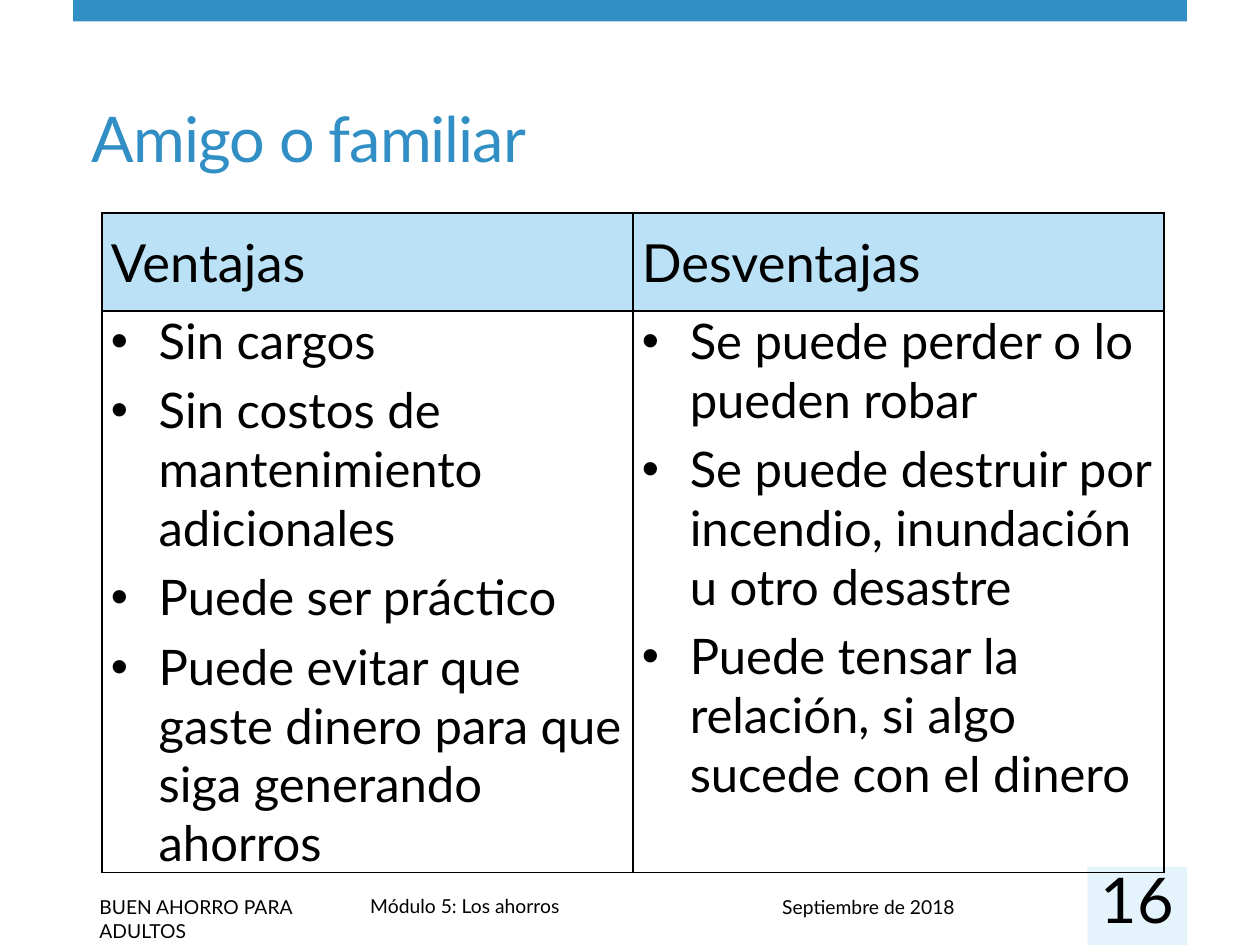
from lxml import etree
from pptx import Presentation
from pptx.dml.color import RGBColor
from pptx.enum.shapes import MSO_SHAPE
from pptx.enum.text import MSO_ANCHOR, PP_ALIGN
from pptx.oxml import parse_xml
from pptx.oxml.ns import nsdecls, qn
from pptx.util import Inches, Pt

RECT = MSO_SHAPE.RECTANGLE
TOP, MIDDLE, BOTTOM = MSO_ANCHOR.TOP, MSO_ANCHOR.MIDDLE, MSO_ANCHOR.BOTTOM
LEFT, CENTER = PP_ALIGN.LEFT, PP_ALIGN.CENTER

BLUE = RGBColor(0x31, 0x8F, 0xC5)
PALE = RGBColor(0xE4, 0xF3, 0xFC)
SKY = RGBColor(0x76, 0xC5, 0xEF)
BLACK = RGBColor(0, 0, 0)
FONT = "Lato"

COLUMNS = {
    "Ventajas": [
        "Sin cargos",
        "Sin costos de mantenimiento adicionales",
        "Puede ser práctico",
        "Puede evitar que gaste dinero para que siga generando ahorros",
    ],
    "Desventajas": [
        "Se puede perder o lo pueden robar",
        "Se puede destruir por incendio, inundación u otro desastre",
        "Puede tensar la relación, si algo sucede con el dinero",
    ],
}
FOOTERS = [
    ("BUEN AHORRO PARA ADULTOS", 0.69, 7.06, 2.09),
    ("Módulo 5: Los ahorros", 2.84, 7.05, 5.66),
    ("Septiembre de 2018", 6.11, 7.06, 2.52),
]


def write(frame, *lines, size, color=BLACK, align=LEFT, after=0,
          bullet=False, spacing=None):
    """Fill a text frame with one paragraph per line."""
    for i, line in enumerate(lines):
        para = frame.add_paragraph() if i else frame.paragraphs[0]
        if bullet:
            add_bullet(para)
        para.alignment = align
        para.space_after = Pt(after)
        run = para.add_run()
        run.text = line
        font = run.font
        font.name, font.size, font.bold = FONT, Pt(size), False
        font.color.rgb = color
        if spacing is not None:
            run._r.get_or_add_rPr().set("spc", str(spacing))


def add_bullet(para):
    props = para._p.get_or_add_pPr()
    indent = Inches(0.38)
    props.set("marL", str(indent))
    props.set("indent", str(-indent))
    etree.SubElement(props, qn("a:buFont"), typeface="Arial")
    etree.SubElement(props, qn("a:buChar"), char="•")
    tabs = etree.SubElement(props, qn("a:tabLst"))
    etree.SubElement(tabs, qn("a:tab"), pos=str(Inches(0.5)), algn="l")


def add_bar(slide, x, y, w, h, color):
    bar = slide.shapes.add_shape(RECT, Inches(x), Inches(y), Inches(w), Inches(h))
    bar.shadow.inherit = False
    bar.fill.solid()
    bar.fill.fore_color.rgb = color
    bar.line.fill.background()


def add_text(slide, text, x, y, w, h, inset=None, **style):
    box = slide.shapes.add_textbox(Inches(x), Inches(y), Inches(w), Inches(h))
    frame = box.text_frame
    frame.word_wrap = True
    if inset is not None:
        frame.margin_left = frame.margin_right = Inches(inset)
        frame.margin_top = frame.margin_bottom = Inches(inset)
    write(frame, text, **style)


def set_title(slide, text):
    title = slide.shapes.title
    title.left, title.top = Inches(0.63), Inches(0.48)
    title.width, title.height = Inches(8.2), Inches(0.96)
    title.text_frame.vertical_anchor = BOTTOM
    write(title.text_frame, text, size=36, color=BLUE, spacing=-60)


def set_cell(cell, *lines, anchor=TOP, fill=None, **style):
    cell.margin_left = cell.margin_right = Inches(0.07)
    cell.margin_top = cell.margin_bottom = 0
    cell.vertical_anchor = anchor
    props = cell._tc.get_or_add_tcPr()
    if fill is None:
        cell.fill.background()
    else:
        cell.fill.solid()
        cell.fill.fore_color.rgb = fill
        tint = props.find(".//" + qn("a:srgbClr"))
        etree.SubElement(tint, qn("a:alpha"), val="50000")
    for i, side in enumerate(("lnL", "lnR", "lnT", "lnB")):
        props.insert(i, parse_xml(
            f'<a:{side} {nsdecls("a")} w="{Pt(1)}"><a:solidFill>'
            f'<a:srgbClr val="{BLACK}"/></a:solidFill></a:{side}>'))
    write(cell.text_frame, *lines, **style)


def add_grid(slide):
    heights = (0.78, 4.45)
    shape = slide.shapes.add_table(
        len(heights), len(COLUMNS), Inches(0.81), Inches(1.69),
        Inches(8.43), Inches(sum(heights)))
    grid = shape.table
    grid.first_row = grid.horz_banding = False
    for row, height in zip(grid.rows, heights):
        row.height = Inches(height)
    for i, (head, points) in enumerate(COLUMNS.items()):
        set_cell(grid.cell(0, i), head, anchor=MIDDLE, fill=SKY, size=30, after=12)
        set_cell(grid.cell(1, i), *points, size=28, after=6, bullet=True)


def main():
    deck = Presentation()
    deck.slide_width, deck.slide_height = Inches(10), Inches(7.5)
    slide = deck.slides.add_slide(deck.slide_layouts[5])
    add_bar(slide, 0.58, 0, 8.84, 0.17, BLUE)
    add_bar(slide, 8.63, 6.88, 0.79, 0.62, PALE)
    for text, x, y, w in FOOTERS:
        add_text(slide, text, x, y, w, 0.29, size=11)
    set_title(slide, "Amigo o familiar")
    add_grid(slide)
    add_text(slide, "16", 8.63, 6.83, 0.79, 0.45, inset=0, size=36, align=CENTER)
    deck.save("out.pptx")


if __name__ == "__main__":
    main()
